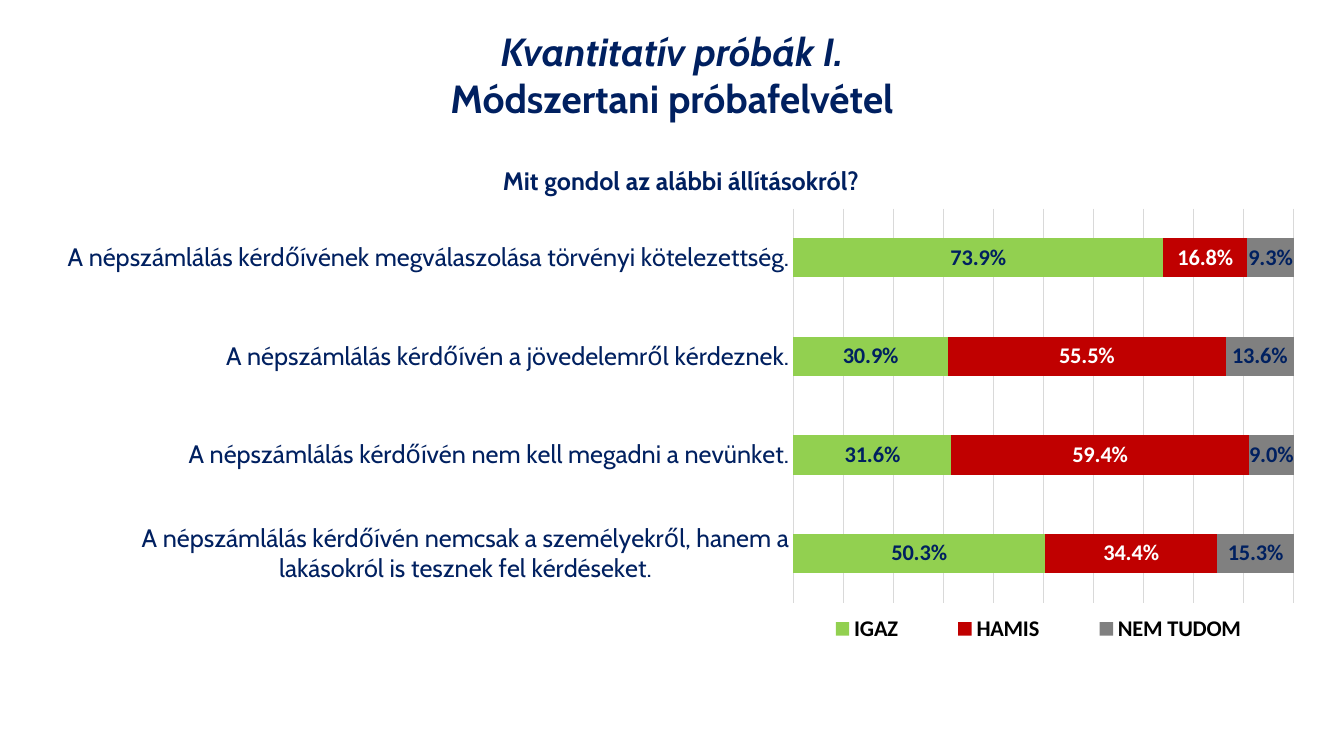
from lxml import etree
from pptx import Presentation
from pptx.chart.data import CategoryChartData
from pptx.dml.color import RGBColor
from pptx.enum.chart import XL_CHART_TYPE, XL_LABEL_POSITION, XL_LEGEND_POSITION, XL_TICK_MARK
from pptx.enum.text import MSO_ANCHOR, PP_ALIGN
from pptx.oxml.ns import qn
from pptx.util import Cm, Pt

BAR_STACKED = XL_CHART_TYPE.BAR_STACKED
LABEL_CENTER = XL_LABEL_POSITION.CENTER
LEGEND_BOTTOM = XL_LEGEND_POSITION.BOTTOM
NO_TICK = XL_TICK_MARK.NONE
MIDDLE = MSO_ANCHOR.MIDDLE
CENTER = PP_ALIGN.CENTER

NAVY, GRID = "002060", "D9D9D9"
PERCENT = "0.0%"


def set_font(font, color, **values):
    for name, value in values.items():
        setattr(font, name, value)
    font.color.rgb = RGBColor.from_string(color)


def set_layout(parent, position, **values):
    """Place a chart part by fractions of the chart's size."""
    for old in parent.findall(qn("c:layout")):
        parent.remove(old)
    layout = etree.Element(qn("c:layout"))
    manual = etree.SubElement(layout, qn("c:manualLayout"))
    for name, value in values.items():
        etree.SubElement(manual, qn(f"c:{name}")).set("val", str(value))
    parent.insert(position, layout)


prs = Presentation()
prs.slide_width, prs.slide_height = Cm(33.87), Cm(19.05)
s = prs.slides.add_slide(prs.slide_layouts[6])

# Stacked bar chart
data = CategoryChartData(number_format=PERCENT)
data.categories = [
    "A népszámlálás kérdőívén nemcsak a személyekről, hanem a lakásokról is tesznek fel kérdéseket.",
    "A népszámlálás kérdőívén nem kell megadni a nevünket.",
    "A népszámlálás kérdőívén a jövedelemről kérdeznek.",
    "A népszámlálás kérdőívének megválaszolása törvényi kötelezettség.",
]
answers = [
    ("IGAZ", (0.503, 0.316, 0.309, 0.739), "92D050", NAVY),
    ("HAMIS", (0.344, 0.594, 0.555, 0.168), "C00000", "FFFFFF"),
    ("NEM TUDOM", (0.153, 0.09, 0.136, 0.093), "808080", NAVY),
]
for name, values, fill, label in answers:
    data.add_series(name, values)
chart = s.shapes.add_chart(BAR_STACKED, Cm(1.07), Cm(3.61), Cm(32.18), Cm(12.95), data).chart
set_font(chart.font, "000000", name="Calibri", size=Pt(10))

# Bars and their labels
plot = chart.plots[0]
plot.gap_width, plot.overlap, plot.vary_by_categories = 150, 100, False
for series, (name, values, fill, label) in zip(plot.series, answers):
    series.format.fill.solid()
    series.format.fill.fore_color.rgb = RGBColor.from_string(fill)
    labels = series.data_labels
    labels.show_value = True
    labels.number_format, labels.number_format_is_linked = PERCENT, False
    labels.position = LABEL_CENTER
    set_font(labels.font, label, name="Calibri", size=Pt(16), bold=True)

# Axes
cat_axis, val_axis = chart.category_axis, chart.value_axis
cat_axis.major_tick_mark = cat_axis.minor_tick_mark = NO_TICK
set_font(cat_axis.tick_labels.font, NAVY, name="Cabin", size=Pt(18), bold=False)
val_axis.minimum_scale, val_axis.maximum_scale, val_axis.major_unit = 0, 1, 0.1
val_axis.has_major_gridlines = True
val_axis.visible = False
for line in (cat_axis.format.line, val_axis.major_gridlines.format.line):
    line.color.rgb = RGBColor.from_string(GRID)
    line.width = Pt(0.75)

# Chart title
chart.has_title = True
tf = chart.chart_title.text_frame
r = tf.paragraphs[0].add_run()
r.text = "Mit gondol az alábbi állításokról?"
set_font(r.font, NAVY, name="Cabin", size=Pt(18), bold=True)

# Legend
chart.has_legend = True
legend = chart.legend
legend.position, legend.include_in_layout = LEGEND_BOTTOM, False
set_font(legend.font, "000000", name="Calibri", size=Pt(16), bold=True)

# Plot and legend share the right side of the chart
plot_area = chart.element.find(".//" + qn("c:plotArea"))
legend_part = chart.element.find(".//" + qn("c:legend"))
set_layout(plot_area, 0, layoutTarget="inner", xMode="edge", yMode="edge",
           x=0.588, y=0.127, w=0.392, h=0.767)
set_layout(legend_part, 1, xMode="edge", yMode="edge", x=0.58, y=0.91, w=0.4, h=0.07)

# Slide heading
sp = s.shapes.add_textbox(0, Cm(0.56), prs.slide_width, Cm(2.64))
tf = sp.text_frame
tf.word_wrap, tf.vertical_anchor = True, MIDDLE
p = tf.paragraphs[0]
p.alignment = CENTER
for text, italic in (("Kvantitatív próbák I.", True), ("Módszertani próbafelvétel", False)):
    if p.runs:
        p.add_line_break()
    r = p.add_run()
    r.text = text
    set_font(r.font, NAVY, name="Cabin", size=Pt(28), bold=True, italic=italic)

prs.save("out.pptx")
